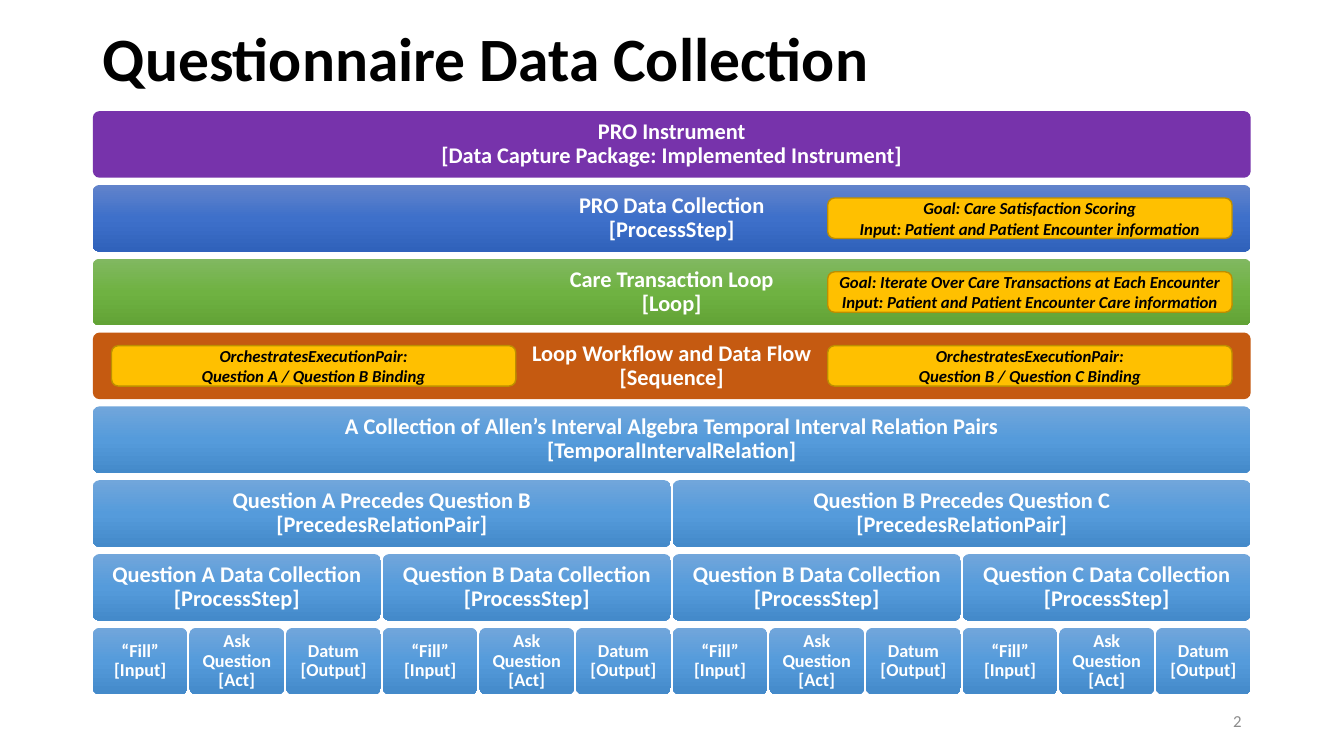
from copy import deepcopy

from pptx import Presentation
from pptx.dml.color import RGBColor
from pptx.enum.shapes import MSO_SHAPE as Shape
from pptx.enum.text import MSO_ANCHOR as Anchor, MSO_AUTO_SIZE as Fit, PP_ALIGN as Align
from pptx.util import Cm, Pt

FONT = "Calibri"
BLACK = RGBColor(0x00, 0x00, 0x00)
WHITE = RGBColor(0xFF, 0xFF, 0xFF)
GREY = RGBColor(0x8C, 0x8C, 0x8C)
GOLD = RGBColor(0xFF, 0xC0, 0x00)
OCHRE = RGBColor(0xBD, 0x8E, 0x00)

# One colour fills a bar plainly, three shade it from top to bottom
PURPLE = [RGBColor(0x77, 0x33, 0xAB)]
RUST = [RGBColor(0xC5, 0x5A, 0x11)]
BLUE = [RGBColor(0x61, 0x83, 0xCB), RGBColor(0x3E, 0x70, 0xCA), RGBColor(0x30, 0x62, 0xBB)]
GREEN = [RGBColor(0x81, 0xB8, 0x61), RGBColor(0x6F, 0xB2, 0x42), RGBColor(0x62, 0xA3, 0x36)]
SKY = [RGBColor(0x71, 0xA6, 0xDB), RGBColor(0x55, 0x9B, 0xDB), RGBColor(0x44, 0x8A, 0xCA)]

LEFT, WIDE = 2.34, 29.18
HIGH, PITCH, GAP = 1.68, 1.86, 0.05
TAG_WIDE, TAG_HIGH, TAG_EDGE = 10.19, 1.02, 0.47

STEP = "[ProcessStep]"
PAIR = "[PrecedesRelationPair]"
ACTS = [["“Fill”", "[Input]"], ["Ask Question", "[Act]"], ["Datum", "[Output]"]]

# Each row: colours, text size, cells
ROWS = [
    (PURPLE, 16, [["PRO Instrument", "[Data Capture Package: Implemented Instrument]"]]),
    (BLUE, 16, [["PRO Data Collection", STEP]]),
    (GREEN, 16, [["Care Transaction Loop", "[Loop]"]]),
    (RUST, 16, [["Loop Workflow and Data Flow", "[Sequence]"]]),
    (SKY, 16, [["A Collection of Allen’s Interval Algebra Temporal Interval Relation Pairs",
                "[TemporalIntervalRelation]"]]),
    (SKY, 16, [[f"Question {a} Precedes Question {b}", PAIR] for a, b in ("AB", "BC")]),
    (SKY, 16, [[f"Question {q} Data Collection", STEP] for q in "ABBC"]),
    (SKY, 13, ACTS * 4),
]

# Each tag: row, whether it sits at the right, lines
TAGS = [
    (1, True, ["Goal: Care Satisfaction Scoring",
               "Input: Patient and Patient Encounter information"]),
    (2, True, ["Goal: Iterate Over Care Transactions at Each Encounter",
               "Input: Patient and Patient Encounter Care information"]),
    (3, False, ["OrchestratesExecutionPair:", "Question A / Question B Binding"]),
    (3, True, ["OrchestratesExecutionPair:", "Question B / Question C Binding"]),
]


def write(shape, lines, size, color, align=Align.CENTER, space=1.0, inset=0.25,
          bold=True, slant=False):
    frame = shape.text_frame
    frame.word_wrap = True
    frame.auto_size = Fit.NONE
    frame.vertical_anchor = Anchor.MIDDLE
    frame.margin_left = frame.margin_right = Cm(inset)
    frame.margin_top = frame.margin_bottom = Cm(0.13)
    para = frame.paragraphs[0]
    para.alignment = align
    para.line_spacing = space
    for i, line in enumerate(lines):
        if i:
            para.add_line_break()
        run = para.add_run()
        run.text = line
        font = run.font
        font.name, font.size, font.color.rgb = FONT, Pt(size), color
        font.bold, font.italic = bold, slant


def paint(shape, colors):
    fill = shape.fill
    if len(colors) == 1:
        fill.solid()
        fill.fore_color.rgb = colors[0]
        return
    fill.gradient()
    fill.gradient_angle = 270
    # The stock gradient has two stops; a third goes between them
    first = fill._fill._gradFill.gsLst[0]
    first.addnext(deepcopy(first))
    for i, (stop, color) in enumerate(zip(fill.gradient_stops, colors)):
        stop.position = i / 2
        stop.color.rgb = color


def block(slide, left, top, width, height, round_by):
    """Add a rounded box without shadow."""
    shape = slide.shapes.add_shape(
        Shape.ROUNDED_RECTANGLE, Cm(left), Cm(top), Cm(width), Cm(height))
    shape.adjustments[0] = round_by
    shape.shadow.inherit = False
    return shape


def add_title(slide, left, top, width, height):
    title = slide.shapes.title
    title.left, title.top = Cm(left), Cm(top)
    title.width, title.height = Cm(width), Cm(height)
    write(title, ["Questionnaire Data Collection"], 44, BLACK, Align.LEFT, 0.9)


def add_row(slide, left, top, width, height, row):
    """Split the box evenly into the cells of one row."""
    colors, size, cells = row
    pitch = (width + GAP) / len(cells)
    for i, lines in enumerate(cells):
        cell = block(slide, left + i * pitch, top, pitch - GAP, height, 0.1)
        paint(cell, colors)
        cell.line.fill.background()
        write(cell, lines, size, WHITE, space=0.9, inset=0.18)


def add_tag(slide, left, top, width, height, right, lines):
    """Put a gold note at one end of a row's box."""
    x = left + (width - TAG_EDGE - TAG_WIDE if right else TAG_EDGE)
    tag = block(slide, x, top + (height - TAG_HIGH) / 2, TAG_WIDE, TAG_HIGH, 0.17)
    paint(tag, [GOLD])
    tag.line.color.rgb, tag.line.width = OCHRE, Pt(1)
    write(tag, lines, 12, BLACK, inset=0, slant=True)


def add_stack(slide, left, top, width):
    for i, row in enumerate(ROWS):
        add_row(slide, left, top + i * PITCH, width, HIGH, row)
    for i, right, lines in TAGS:
        add_tag(slide, left, top + i * PITCH, width, HIGH, right, lines)


def add_page(slide, left, top, width, height):
    box = slide.shapes.add_textbox(Cm(left), Cm(top), Cm(width), Cm(height))
    write(box, ["2"], 12, GREY, Align.RIGHT, bold=False)


def main():
    deck = Presentation()
    deck.slide_width, deck.slide_height = Cm(33.87), Cm(19.05)
    slide = deck.slides.add_slide(deck.slide_layouts[5])
    add_title(slide, LEFT, 0.56, WIDE, 1.98)
    add_stack(slide, LEFT, 2.8, WIDE)
    add_page(slide, 23.92, 17.66, 7.62, 1.01)
    deck.save("out.pptx")


if __name__ == "__main__":
    main()
